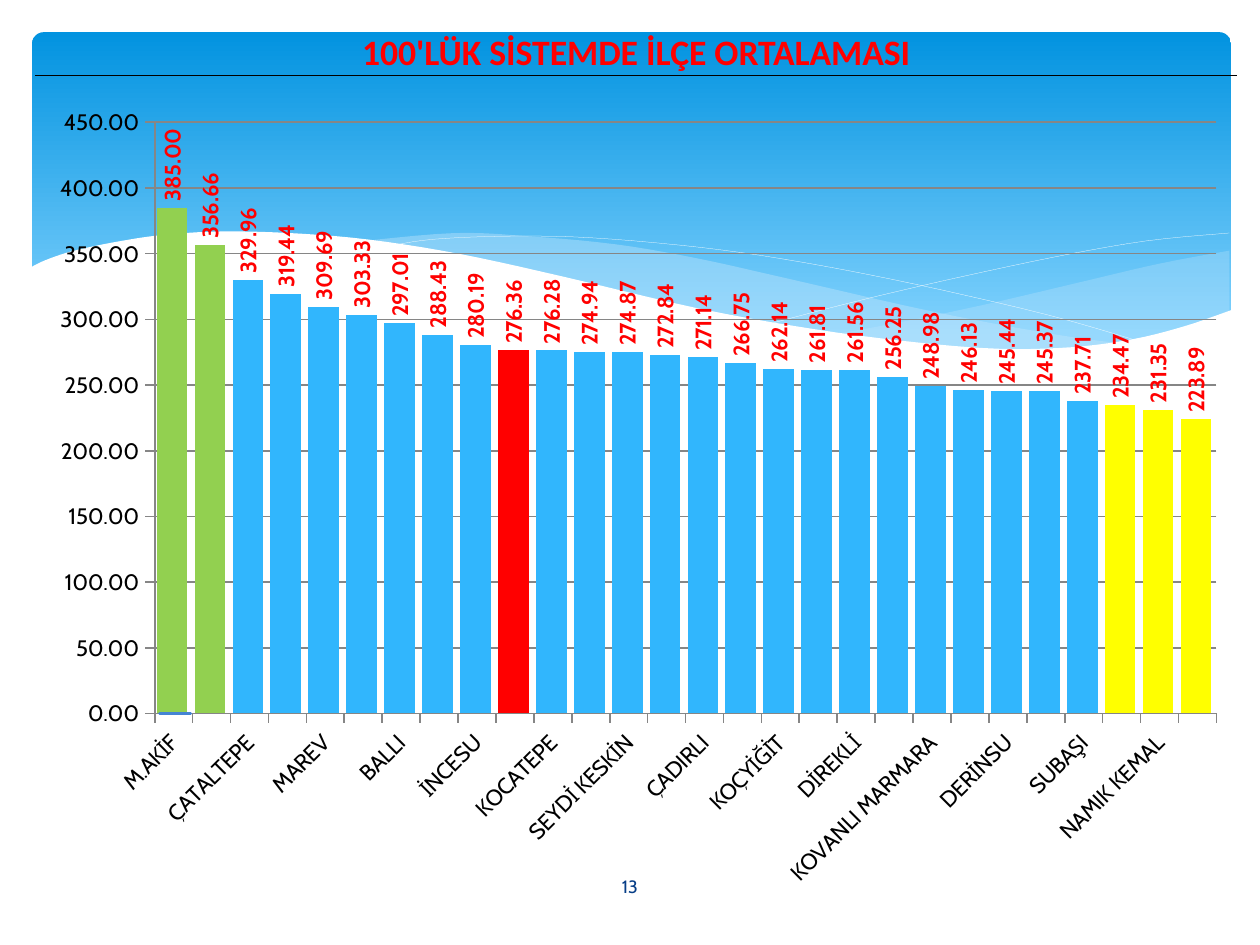
from lxml import etree
from pptx import Presentation
from pptx.chart.data import CategoryChartData
from pptx.dml.color import RGBColor
from pptx.enum.chart import XL_CHART_TYPE as ChartType, XL_LABEL_POSITION as LabelPosition
from pptx.enum.shapes import MSO_SHAPE as Shape
from pptx.enum.text import MSO_ANCHOR as Anchor, PP_ALIGN as Align
from pptx.oxml import parse_xml
from pptx.oxml.ns import nsdecls, qn
from pptx.util import Inches, Pt

# Every second column carries a school name
SCHOOLS = ["M.AKİF", "ÇATALTEPE", "MAREV", "BALLI", "İNCESU", "KOCATEPE", "SEYDİ KESKİN",
           "ÇADIRLI", "KOÇYİĞİT", "DİREKLİ", "KOVANLI MARMARA", "DERİNSU", "SUBAŞI",
           "NAMIK KEMAL"]
SCORES = [385, 356.66, 329.96, 319.44, 309.69, 303.33, 297.01, 288.43, 280.19, 276.36,
          276.28, 274.94, 274.87, 272.84, 271.14, 266.75, 262.14, 261.81, 261.56, 256.25,
          248.98, 246.13, 245.44, 245.37, 237.71, 234.47, 231.35, 223.89]
GREEN, RED, YELLOW = "92D050", "FF0000", "FFFF00"
HIGHLIGHTS = {0: GREEN, 1: GREEN, 9: RED, 25: YELLOW, 26: YELLOW, 27: YELLOW}

# Key points of the waves, in inches
RIGHT_TOP = [(7.65, 1.56), (7.22, 1.64), (6.75, 1.75), (6.11, 1.9), (5.53, 2.02), (5.19, 2.08)]
RIGHT_BOTTOM = [(5.19, 2.08), (5.63, 2.14), (6.12, 2.17), (6.54, 2.17), (6.97, 2.13),
                (7.33, 2.05), (7.65, 1.94)]
MIDDLE_TOP = [(7, 2.14), (6.56, 2.08), (5.81, 1.94), (4.93, 1.74), (4.35, 1.61), (3.83, 1.52),
              (3.29, 1.47), (2.83, 1.45), (2.25, 1.5)]
MIDDLE_BOTTOM = [(2.25, 1.5), (2.84, 1.59), (3.52, 1.74), (4.15, 1.88), (4.85, 2.03),
                 (5.45, 2.12), (5.96, 2.17), (6.49, 2.18), (7, 2.14)]
LONG_LINE = [(2.43, 1.53), (2.69, 1.49), (3.15, 1.47), (3.68, 1.48), (4.36, 1.54), (4.98, 1.63),
             (5.7, 1.77), (6.52, 1.96), (7.11, 2.13)]
SHORT_LINE = [(4.81, 2.01), (5.27, 1.89), (5.86, 1.75), (6.56, 1.6), (7.13, 1.5), (7.65, 1.45)]
WHITE_TOP = [(7.66, 1.93), (7.37, 2.03), (7.05, 2.11), (6.67, 2.16), (6.22, 2.17), (5.7, 2.13),
             (5.08, 2.05), (4.35, 1.92), (3.5, 1.72), (2.86, 1.58), (2.29, 1.49), (1.8, 1.45),
             (1.38, 1.44), (1.03, 1.46), (0.75, 1.5), (0.46, 1.56), (0.28, 1.62), (0.18, 1.67)]
WHITE_BASE = [(0.18, 2.58), (7.66, 2.58)]


def color(code):
    return RGBColor.from_string(code)


def smooth(points, steps=5):
    """Catmull-Rom curve through the points."""
    padded = [points[0], *points, points[-1]]
    curve = [points[0]]
    for a, b, c, d in zip(padded, padded[1:], padded[2:], padded[3:]):
        for step in range(1, steps + 1):
            t = step / steps
            curve.append(tuple(
                q + t * (r - p) / 2 + t ** 2 * (2 * p - 5 * q + 4 * r - s) / 2
                + t ** 3 * (3 * q - p - 3 * r + s) / 2
                for p, q, r, s in zip(a, b, c, d)))
    return curve


class SlideBuilder:
    body_font = "Cabin"
    title_font = "Calibri"
    grid_color = "868686"

    def __init__(self, page):
        self.page = page

    def style(self, font, name, size, code, bold=False):
        font.name, font.size, font.bold = name, Pt(size), bold
        font.color.rgb = color(code)

    def sky(self, left, top, width, height):
        panel = self.page.shapes.add_shape(Shape.ROUNDED_RECTANGLE, Inches(left), Inches(top),
                                           Inches(width), Inches(height))
        panel.adjustments[0] = 0.034
        panel.shadow.inherit = False
        panel.line.fill.background()
        panel.fill.gradient()
        panel.fill.gradient_angle = 270
        for stop, (place, code) in zip(panel.fill.gradient_stops, [(0, "0293E0"), (0.9, "83D3FE")]):
            stop.position, stop.color.rgb = place, color(code)

    def wave(self, points, fill=None, opacity=100):
        """A filled wave, or an open white hairline when there is no fill."""
        corners = [(Inches(x), Inches(y)) for x, y in points]
        builder = self.page.shapes.build_freeform(*corners[0])
        builder.add_line_segments(corners[1:], close=fill is not None)
        wave = builder.convert_to_shape()
        wave.shadow.inherit = False
        if fill is None:
            wave.fill.background()
            wave.line.color.rgb = color("FFFFFF")
            wave.line.width = Pt(0.1)
            return
        wave.fill.solid()
        wave.fill.fore_color.rgb = color(fill)
        wave.line.fill.background()
        if opacity < 100:
            tint = wave._element.spPr.find(qn("a:solidFill"))[0]
            etree.SubElement(tint, qn("a:alpha")).set("val", str(opacity * 1000))

    def page_number(self, text, left, top, width, height):
        box = self.page.shapes.add_textbox(Inches(left), Inches(top), Inches(width), Inches(height))
        frame = box.text_frame
        frame.word_wrap = True
        frame.vertical_anchor = Anchor.MIDDLE
        frame.margin_left = frame.margin_right = Inches(0.08)
        frame.margin_top = frame.margin_bottom = Inches(0.04)
        para = frame.paragraphs[0]
        para.text, para.alignment = text, Align.CENTER
        self.style(para.font, self.body_font, 8, "073E87")

    def title_table(self, text, left, top, width, height):
        table = self.page.shapes.add_table(1, 1, Inches(left), Inches(top),
                                           Inches(width), Inches(height)).table
        table.first_row = table.horz_banding = False
        cell = table.cell(0, 0)
        cell.margin_left = cell.margin_right = cell.margin_top = Inches(0.01)
        cell.margin_bottom = 0
        cell.vertical_anchor = Anchor.BOTTOM
        para = cell.text_frame.paragraphs[0]
        para.text, para.alignment = text, Align.CENTER
        self.style(para.font, self.title_font, 16, RED, bold=True)
        black = '<a:solidFill><a:srgbClr val="000000"/></a:solidFill>'
        for side in "LRTB":
            paint = black if side == "B" else "<a:noFill/>"
            cell._tc.get_or_add_tcPr().append(parse_xml(
                f'<a:ln{side} {nsdecls("a")} w="6350">{paint}</a:ln{side}>'))
        cell.fill.background()

    def column_chart(self, names, values, highlights, left, top, width, height):
        data = CategoryChartData(number_format="0.00")
        data.categories = [label for name in names for label in (name, "")]
        data.add_series("Series 1", values)
        data.add_series("Series 2", [0])
        chart = self.page.shapes.add_chart(ChartType.COLUMN_CLUSTERED, Inches(left), Inches(top),
                                           Inches(width), Inches(height), data).chart
        chart.has_legend = chart.has_title = False
        self.style(chart.font, self.body_font, 10, "000000")

        # Columns
        plot = chart.plots[0]
        plot.gap_width, plot.overlap, plot.vary_by_categories = 13, 90, False
        scores, baseline = plot.series
        for series, code in [(scores, "31B6FD"), (baseline, "4584D3")]:
            series.format.fill.solid()
            series.format.fill.fore_color.rgb = color(code)
        baseline.format.line.color.rgb = color("4584D3")
        baseline.format.line.width = Pt(1.5)
        for index, code in highlights.items():
            fill = scores.points[index].format.fill
            fill.solid()
            fill.fore_color.rgb = color(code)
        labels = scores.data_labels
        labels.show_value = True
        labels.number_format, labels.number_format_is_linked = "0.00", False
        labels.position = LabelPosition.OUTSIDE_END
        self.style(labels.font, self.body_font, 10, RED, bold=True)

        # Axes
        bottom, side = chart.category_axis, chart.value_axis
        side.minimum_scale, side.maximum_scale, side.major_unit = 0, 450, 50
        side.tick_labels.number_format = "0.00"
        side.tick_labels.number_format_is_linked = False
        self.style(bottom.tick_labels.font, self.body_font, 10, "000000")
        for item in (bottom, side, side.major_gridlines):
            item.format.line.color.rgb = color(self.grid_color)
            item.format.line.width = Pt(0.75)
        self.chart_layout(chart._chartSpace)

    def chart_layout(self, space):
        """Turn labels, label every second column, fix the plot area, clear backgrounds."""
        for place, degrees in [("c:catAx", -45), ("c:ser/c:dLbls", -90)]:
            body = space.xpath(f".//{place}/c:txPr/a:bodyPr")[0]
            body.set("rot", str(degrees * 60000))
            body.set("vert", "horz")
        skip = parse_xml(f'<c:tickLblSkip {nsdecls("c")} val="2"/>')
        space.xpath(".//c:catAx/c:noMultiLvlLbl")[0].addprevious(skip)
        area = space.xpath(".//c:plotArea")[0]
        for layout in area.findall(qn("c:layout")):
            area.remove(layout)
        sizes = "".join(f'<c:{key} val="{value}"/>' for key, value in
                        [("x", 0.099), ("y", 0.036), ("w", 0.881), ("h", 0.73)])
        area.insert(0, parse_xml(
            f'<c:layout {nsdecls("c")}><c:manualLayout><c:layoutTarget val="inner"/>'
            f'<c:xMode val="edge"/><c:yMode val="edge"/>{sizes}</c:manualLayout></c:layout>'))
        clear = f'<c:spPr {nsdecls("c", "a")}><a:noFill/><a:ln><a:noFill/></a:ln></c:spPr>'
        area.append(parse_xml(clear))
        space.find(qn("c:chart")).addnext(parse_xml(clear))


def main():
    deck = Presentation()
    deck.slide_width, deck.slide_height = Inches(7.84), Inches(5.88)
    slide = SlideBuilder(deck.slides.add_slide(deck.slide_layouts[6]))

    # Background
    slide.sky(0.2, 0.2, 7.46, 2.12)
    slide.wave(smooth(RIGHT_TOP) + smooth(RIGHT_BOTTOM), "C6E7FC", 29)
    slide.wave(smooth(MIDDLE_TOP) + smooth(MIDDLE_BOTTOM), "C6E7FC", 40)
    slide.wave(smooth(LONG_LINE))
    slide.wave(smooth(SHORT_LINE))
    slide.wave(smooth(WHITE_TOP) + WHITE_BASE, "FFFFFF")

    # Content
    slide.page_number("13", 3.42, 5.36, 1, 0.31)
    slide.title_table("100'LÜK SİSTEMDE İLÇE ORTALAMASI", 0.22, 0.18, 7.48, 0.29)
    slide.column_chart(SCHOOLS, SCORES, HIGHLIGHTS, 0.22, 0.58, 7.5, 5.04)

    deck.save("out.pptx")


if __name__ == "__main__":
    main()
